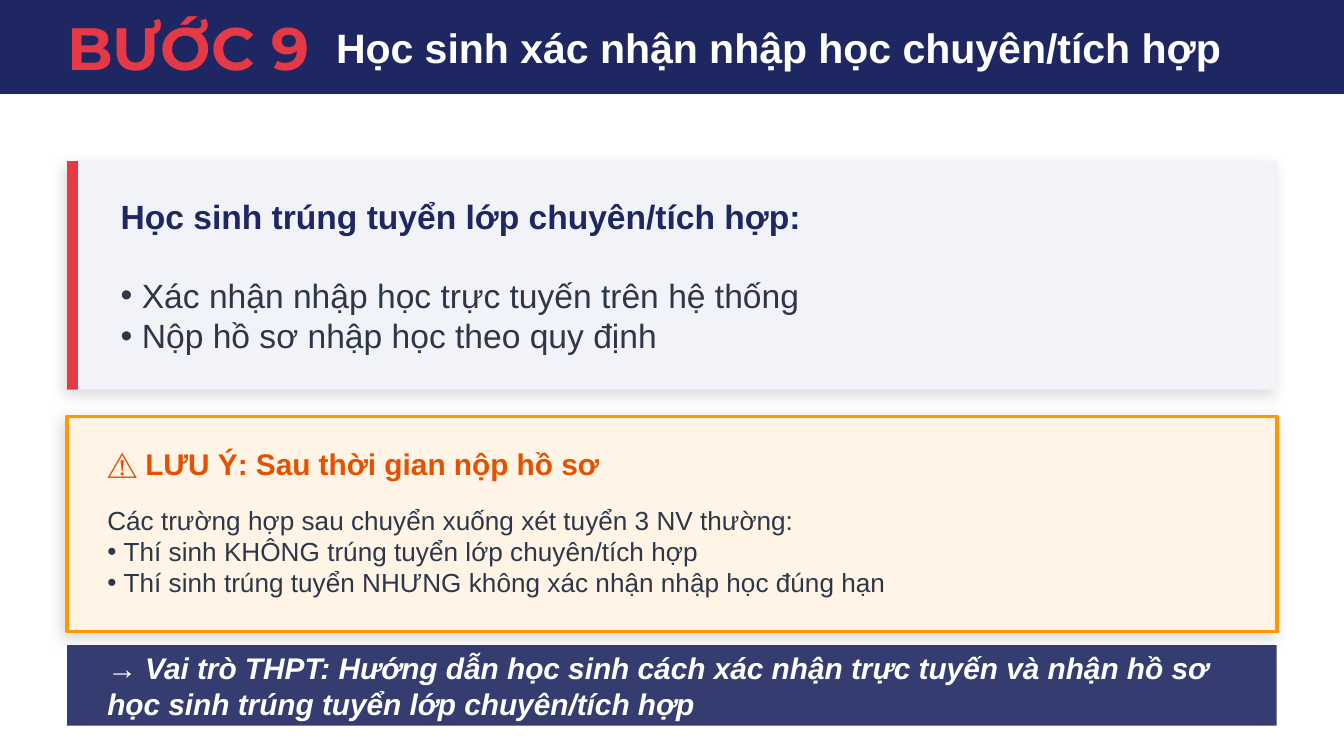
from lxml import etree
from pptx import Presentation
from pptx.dml.color import RGBColor
from pptx.enum.shapes import MSO_SHAPE
from pptx.enum.text import MSO_ANCHOR, MSO_AUTO_SIZE, PP_ALIGN
from pptx.oxml.ns import qn
from pptx.util import Pt

NAVY = RGBColor(0x1E, 0x27, 0x61)
RED = RGBColor(0xE6, 0x39, 0x46)
WHITE = RGBColor(0xFF, 0xFF, 0xFF)
SLATE = RGBColor(0x2D, 0x37, 0x48)
PALE_BLUE = RGBColor(0xF1, 0xF3, 0xF9)
CREAM = RGBColor(0xFF, 0xF4, 0xE6)
ORANGE = RGBColor(0xFF, 0x98, 0x00)
DARK_ORANGE = RGBColor(0xE6, 0x51, 0x00)

MARGIN = 36
CONTENT_WIDTH = 648
BULLET_INDENT = 0.63  # share of the font size


def add_panel(page, left, top, width, height, fill, border=None):
    panel = page.shapes.add_shape(
        MSO_SHAPE.RECTANGLE, Pt(left), Pt(top), Pt(width), Pt(height))
    panel.shadow.inherit = False
    panel.fill.solid()
    panel.fill.fore_color.rgb = fill
    if border is None:
        panel.line.fill.background()
    else:
        panel.line.color.rgb = border
        panel.line.width = Pt(2)
    return panel


def add_soft_shadow(panel):
    effects = panel.element.spPr.find(qn("a:effectLst"))
    shadow = etree.SubElement(
        effects, qn("a:outerShdw"), blurRad=str(Pt(8)), dist=str(Pt(3)),
        dir=str(135 * 60000), algn="bl", rotWithShape="0")
    color = etree.SubElement(shadow, qn("a:srgbClr"), val="000000")
    etree.SubElement(color, qn("a:alpha"), val="15000")


def set_opacity(panel, percent):
    color = panel.element.spPr.find(qn("a:solidFill"))[0]
    etree.SubElement(color, qn("a:alpha"), val=str(percent * 1000))


def prepare_frame(frame, inset=True):
    frame.word_wrap = True
    frame.auto_size = MSO_AUTO_SIZE.NONE
    frame.vertical_anchor = MSO_ANCHOR.MIDDLE
    if not inset:
        frame.margin_left = frame.margin_right = 0
        frame.margin_top = frame.margin_bottom = 0


def add_text_box(page, left, top, width, height, inset=True):
    box = page.shapes.add_textbox(Pt(left), Pt(top), Pt(width), Pt(height))
    prepare_frame(box.text_frame, inset)
    return box.text_frame


def write(para, text, size, color, bold=False, italic=False, font="Arial"):
    para.text = text
    para.alignment = PP_ALIGN.LEFT
    for span in para.runs:
        span.font.name = font
        span.font.size = Pt(size)
        span.font.bold = bold
        span.font.italic = italic
        span.font.color.rgb = color


def add_bullets(frame, items, size, color):
    for item in items:
        para = frame.add_paragraph()
        indent = Pt(size * BULLET_INDENT)
        properties = para._p.get_or_add_pPr()
        properties.set("marL", str(indent))
        properties.set("indent", str(-indent))
        etree.SubElement(properties, qn("a:buFont"), typeface="Arial")
        etree.SubElement(properties, qn("a:buChar"), char="•")
        write(para, item, size, color)


def add_header(page, left, top, width, height):
    band = add_panel(page, left, top, width, height, NAVY)
    title = page.shapes.title
    band.element.addnext(title.element)
    title.left, title.top = Pt(left + 180), Pt(top + 10.8)
    title.width, title.height = Pt(504), Pt(28.8)
    prepare_frame(title.text_frame, inset=False)
    write(title.text_frame.paragraphs[0],
          "Học sinh xác nhận nhập học chuyên/tích hợp", 22, WHITE, bold=True)
    step = add_text_box(page, left + MARGIN, top + 7.2, 144, 36, inset=False)
    write(step.paragraphs[0], "BƯỚC 9", 32, RED, bold=True, font="Montserrat")


def add_admission_card(page, left, top, width, height):
    add_soft_shadow(add_panel(page, left, top, width, height, PALE_BLUE))
    add_panel(page, left, top, 5.76, height, RED)
    frame = add_text_box(
        page, left + 21.6, top + 14.4, width - 43.2, height - 28.8)
    heading = frame.paragraphs[0]
    write(heading, "Học sinh trúng tuyển lớp chuyên/tích hợp:",
          18, NAVY, bold=True)
    heading.space_after = Pt(21)
    add_bullets(frame, ["Xác nhận nhập học trực tuyến trên hệ thống",
                        "Nộp hồ sơ nhập học theo quy định"], 18, SLATE)


def add_warning_card(page, left, top, width, height):
    add_soft_shadow(add_panel(page, left, top, width, height, CREAM, ORANGE))
    text_left, text_width = left + 14.4, width - 28.8
    heading = add_text_box(page, text_left, top + 14.4, text_width, 21.6)
    write(heading.paragraphs[0], "⚠️ LƯU Ý: Sau thời gian nộp hồ sơ",
          16, DARK_ORANGE, bold=True)
    cases = add_text_box(page, text_left, top + 39.6, text_width, 64.8)
    write(cases.paragraphs[0],
          "Các trường hợp sau chuyển xuống xét tuyển 3 NV thường:", 14, SLATE)
    add_bullets(cases, [
        "Thí sinh KHÔNG trúng tuyển lớp chuyên/tích hợp",
        "Thí sinh trúng tuyển NHƯNG không xác nhận nhập học đúng hạn",
    ], 14, SLATE)


def add_role_banner(page, left, top, width, height):
    set_opacity(add_panel(page, left, top, width, height, NAVY), 90)
    frame = add_text_box(
        page, left + 14.4, top + 7.2, width - 28.8, height - 14.4)
    write(frame.paragraphs[0],
          "→ Vai trò THPT: Hướng dẫn học sinh cách xác nhận trực tuyến và "
          "nhận hồ sơ học sinh trúng tuyển lớp chuyên/tích hợp",
          16, WHITE, bold=True, italic=True)


def main():
    deck = Presentation()
    deck.slide_width, deck.slide_height = Pt(720), Pt(405)
    page = deck.slides.add_slide(deck.slide_layouts.get_by_name("Title Only"))
    add_header(page, 0, 0, 720, 50.4)
    add_admission_card(page, MARGIN, 86.4, CONTENT_WIDTH, 122.4)
    add_warning_card(page, MARGIN, 223.2, CONTENT_WIDTH, 115.2)
    add_role_banner(page, MARGIN, 345.6, CONTENT_WIDTH, 43.2)
    deck.save("out.pptx")


if __name__ == "__main__":
    main()
